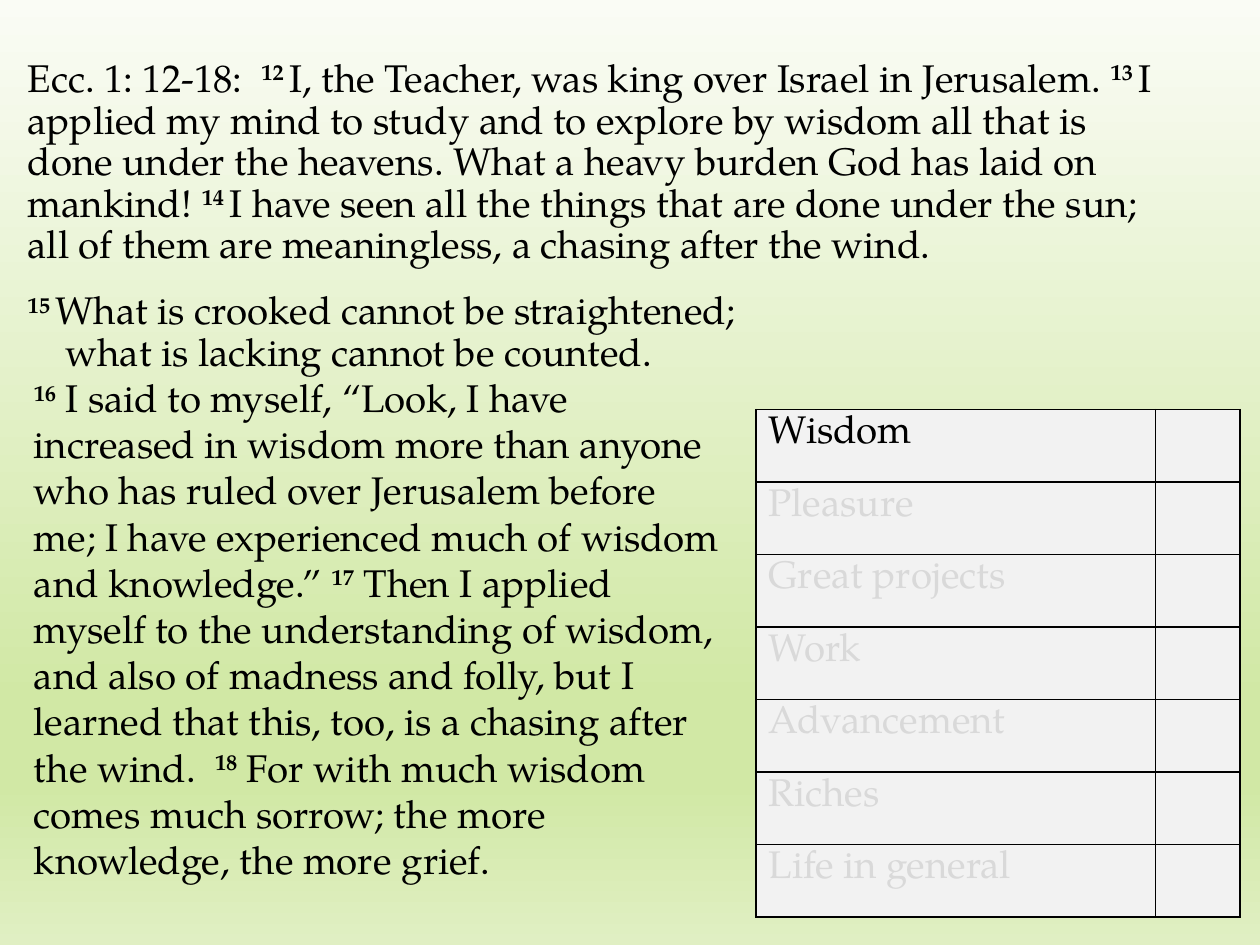
from typing import NamedTuple

from lxml import etree
from pptx import Presentation
from pptx.dml.color import RGBColor
from pptx.enum.text import MSO_ANCHOR, MSO_AUTO_SIZE, PP_ALIGN
from pptx.oxml.ns import qn
from pptx.util import Inches, Pt

TOP = MSO_ANCHOR.TOP
LEFT = PP_ALIGN.LEFT
NO_FIT = MSO_AUTO_SIZE.NONE
GROW = MSO_AUTO_SIZE.SHAPE_TO_FIT_TEXT

BLACK = RGBColor(0x00, 0x00, 0x00)
FADED = RGBColor(0xD9, 0xD9, 0xD9)
CELL_GREY = RGBColor(0xF2, 0xF2, 0xF2)
PALE = RGBColor(0xFA, 0xFC, 0xF5)
GREEN = RGBColor(0xD1, 0xE8, 0xA5)
LIGHT_GREEN = RGBColor(0xE0, 0xEF, 0xC3)
BACKGROUND_STOPS = [(0, PALE), (74, GREEN), (83, GREEN), (100, LIGHT_GREEN)]

SCRIPTURE_FONT = {"name": "TeX Gyre Pagella", "size": Pt(22)}
PASSAGE_FRAME = {
    "margin_left": Inches(0.05), "margin_right": Inches(0.05),
    "margin_top": Inches(0.05), "margin_bottom": Inches(0.05),
    "vertical_anchor": TOP, "word_wrap": True, "auto_size": NO_FIT,
}
REFLECTION_FRAME = {"vertical_anchor": TOP, "word_wrap": True, "auto_size": GROW}
PASSAGE_PARAGRAPH = {
    "line_spacing": 0.9, "space_before": Pt(12), "space_after": Pt(2), "alignment": LEFT,
}


class Verse(NamedTuple):
    number: str
    text: str


class Box(NamedTuple):
    left: float
    top: float
    width: float
    height: float


PASSAGE_BOX = Box(0.17, 0.42, 9.17, 2.67)
REFLECTION_BOX = Box(0.17, 2.92, 5.68, 4.17)
PURSUITS_BOX = Box(6, 3.25, 3.83, 4.03)
PURSUIT_COLUMNS = [3.17, 0.67]
PURSUITS = ["Wisdom", "Pleasure", "Great projects", "Work", "Advancement", "Riches",
            "Life in general"]

TEACHER = [
    Verse("", "Ecc. 1: 12-18:  "),
    Verse("12 ", "I, the Teacher, was king over Israel in Jerusalem. "),
    Verse("13 ", "I applied my mind to study and to explore by wisdom all that is done under "
                 "the heavens. What a heavy burden God has laid on mankind! "),
    Verse("14 ", "I have seen all the things that are done under the sun; all of them are "
                 "meaningless, a chasing after the wind."),
]
PROVERB = [
    Verse("15 ", "What is crooked cannot be straightened;\nwhat is lacking cannot be counted."),
]
REFLECTION = [
    Verse("16", " I said to myself, “Look, I have increased in wisdom more than anyone who has "
                "ruled over Jerusalem before me; I have experienced much of wisdom and "
                "knowledge.” "),
    Verse("17", " Then I applied myself to the understanding of wisdom, and also of madness and "
                "folly, but I learned that this, too, is a chasing after the wind.  "),
    Verse("18", " For with much wisdom comes much sorrow; the more knowledge, the more grief."),
]


def apply_format(target, values: dict) -> None:
    for attribute, value in values.items():
        setattr(target, attribute, value)


def add_text(paragraph, text: str, color: RGBColor = BLACK, raised: bool = False) -> None:
    run = paragraph.add_run()
    run.text = text
    apply_format(run.font, SCRIPTURE_FONT | {"bold": raised})
    run.font.color.rgb = color
    if raised:
        run.font._element.set("baseline", "30000")


def write_verses(paragraph, verses: list[Verse]) -> None:
    for verse in verses:
        if verse.number:
            add_text(paragraph, verse.number, raised=True)
        for index, line in enumerate(verse.text.split("\n")):
            if index:
                paragraph.add_line_break()
            add_text(paragraph, line)


def remove_bullet(paragraph, hanging: float) -> None:
    properties = paragraph._p.get_or_add_pPr()
    properties.set("marL", str(Inches(hanging)))
    properties.set("indent", str(-Inches(hanging)))
    etree.SubElement(properties, qn("a:buNone"))


def paint_background(slide) -> None:
    fill = slide.background.fill
    fill.gradient()
    fill.gradient_angle = 270
    stops = slide.background._cSld.find(".//" + qn("a:gsLst"))
    for stop in list(stops):
        stops.remove(stop)
    for percent, color in BACKGROUND_STOPS:
        stop = etree.SubElement(stops, qn("a:gs"), pos=str(percent * 1000))
        etree.SubElement(stop, qn("a:srgbClr"), val=str(color))


def add_passage(slide) -> None:
    slide.shapes.title._element.getparent().remove(slide.shapes.title._element)
    passage = slide.placeholders[1]
    passage.left, passage.top, passage.width, passage.height = map(Inches, PASSAGE_BOX)
    frame = passage.text_frame
    apply_format(frame, PASSAGE_FRAME)
    paragraphs = [frame.paragraphs[0], frame.add_paragraph()]
    for paragraph, verses, hanging in zip(paragraphs, [TEACHER, PROVERB], [0, 0.3]):
        apply_format(paragraph, PASSAGE_PARAGRAPH)
        remove_bullet(paragraph, hanging)
        write_verses(paragraph, verses)


def style_cell(cell) -> None:
    properties = cell._tc.get_or_add_tcPr()
    for side in ("lnL", "lnR", "lnT", "lnB"):
        border = etree.SubElement(properties, qn("a:" + side), w=str(Pt(1)))
        solid = etree.SubElement(border, qn("a:solidFill"))
        etree.SubElement(solid, qn("a:srgbClr"), val=str(BLACK))
    cell.fill.solid()
    cell.fill.fore_color.rgb = CELL_GREY


def add_pursuits(slide) -> None:
    table = slide.shapes.add_table(
        len(PURSUITS), len(PURSUIT_COLUMNS), *map(Inches, PURSUITS_BOX)).table
    apply_format(table, {"first_row": False, "horz_banding": False})
    for column, width in zip(table.columns, PURSUIT_COLUMNS):
        column.width = Inches(width)
    for row, pursuit in zip(table.rows, PURSUITS):
        row.height = Inches(PURSUITS_BOX.height / len(PURSUITS))
        for cell in row.cells:
            style_cell(cell)
        color = BLACK if pursuit == "Wisdom" else FADED
        add_text(row.cells[0].text_frame.paragraphs[0], pursuit, color)


def add_reflection(slide) -> None:
    frame = slide.shapes.add_textbox(*map(Inches, REFLECTION_BOX)).text_frame
    apply_format(frame, REFLECTION_FRAME)
    write_verses(frame.paragraphs[0], REFLECTION)


def main() -> None:
    presentation = Presentation()
    presentation.slide_width = Inches(10)
    presentation.slide_height = Inches(7.5)
    slide = presentation.slides.add_slide(presentation.slide_layouts[1])
    paint_background(slide)
    add_passage(slide)
    add_pursuits(slide)
    add_reflection(slide)
    presentation.save("out.pptx")


if __name__ == "__main__":
    main()
